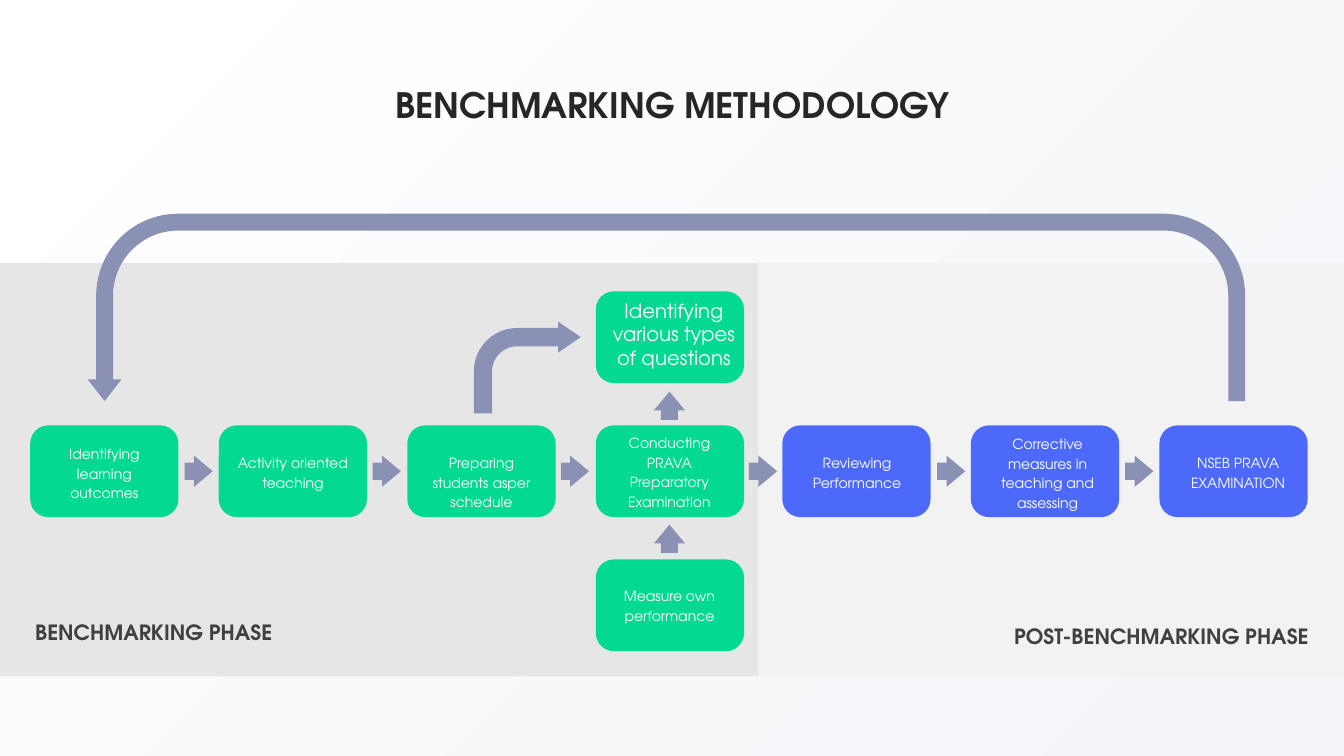
from pptx import Presentation
from pptx.dml.color import RGBColor
from pptx.enum.shapes import MSO_SHAPE
from pptx.enum.text import MSO_ANCHOR, MSO_AUTO_SIZE, PP_ALIGN
from pptx.util import Inches, Pt

RECT = MSO_SHAPE.RECTANGLE
ROUNDED = MSO_SHAPE.ROUNDED_RECTANGLE
RIGHT_ARROW = MSO_SHAPE.RIGHT_ARROW
BENT_ARROW = MSO_SHAPE.BENT_ARROW
U_TURN_ARROW = MSO_SHAPE.U_TURN_ARROW
TOP = MSO_ANCHOR.TOP
NO_AUTOFIT = MSO_AUTO_SIZE.NONE
LEFT, CENTER, RIGHT = PP_ALIGN.LEFT, PP_ALIGN.CENTER, PP_ALIGN.RIGHT

WHITE = RGBColor(0xFF, 0xFF, 0xFF)
PALE_BLUE = RGBColor(0xF2, 0xF4, 0xF8)
LIGHT_GREY = RGBColor(0xF2, 0xF2, 0xF2)
MID_GREY = RGBColor(0xE7, 0xE6, 0xE6)
GREEN = RGBColor(0x03, 0xD9, 0x90)
BLUE = RGBColor(0x4D, 0x69, 0xFA)
SLATE = RGBColor(0x8A, 0x91, 0xB5)
TITLE_INK = RGBColor(0x26, 0x26, 0x26)
LABEL_INK = RGBColor(0x40, 0x40, 0x40)
FONT = "TeX Gyre Adventor"

TITLE = "BENCHMARKING METHODOLOGY"
PHASES = [
    ("BENCHMARKING PHASE", LEFT, (0.25, 6.1, 2.58, 0.35)),
    ("POST-BENCHMARKING PHASE", RIGHT, (9.92, 6.14, 3.16, 0.35)),
]
PANELS = [(0, 7.52, MID_GREY), (7.52, 5.81, LIGHT_GREY)]

# text, column, row, fill, size, line spacing, (text left, text top, text width)
STEPS = [
    ("Identifying learning outcomes", 0, 1, GREEN, 10, 14, (0.06, 0.12, 1.35)),
    ("Activity oriented teaching", 1, 1, GREEN, 10, 14, (0.03, 0.21, 1.41)),
    ("Preparing students asper schedule", 2, 1, GREEN, 10, 14, (0.03, 0.21, 1.41)),
    ("Conducting PRAVA Preparatory Examination", 3, 1, GREEN, 10, 14, (0.19, 0.01, 1.08)),
    ("Reviewing Performance", 4, 1, BLUE, 10, 14, (0.16, 0.21, 1.16)),
    ("Corrective measures in teaching and assessing", 5, 1, BLUE, 10, 14, (0.18, 0.02, 1.16)),
    ("NSEB PRAVA EXAMINATION", 6, 1, BLUE, 10, 14, (0.2, 0.21, 1.16)),
    ("Identifying various types of questions", 3, 0, GREEN, 14, None, (0.03, 0.02, 1.49)),
    ("Measure own performance", 3, 2, GREEN, 10, 14, (0.09, 0.2, 1.28)),
]

STEP_W, STEP_H = 1.47, 0.91
COLUMN_PITCH = 1.87
COLUMN_X = [start + i * COLUMN_PITCH
            for start, count in ((0.3, 4), (7.76, 3)) for i in range(count)]
FIRST_Y, ROW_PITCH = 2.89, 1.33
SIDE_INSET = 0.05
ARROW_W, ARROW_H = 0.28, 0.31
ARROW_PITCH = (11.16 - 1.83) / 5
ARROW_ADJ = (0.547, 0.664)


def add_block(slide, kind, box, fill, adjustments=()):
    block = slide.shapes.add_shape(kind, *map(Inches, box))
    block.shadow.inherit = False
    block.fill.solid()
    block.fill.fore_color.rgb = fill
    block.line.fill.background()
    for index, value in enumerate(adjustments):
        block.adjustments[index] = value
    return block


def write(frame, text, align, color, size, bold=False, spacing=None):
    frame.text = text
    frame.vertical_anchor = TOP
    paragraph = frame.paragraphs[0]
    paragraph.alignment = align
    if spacing:
        paragraph.line_spacing = Pt(spacing)
    font = paragraph.runs[0].font
    for name, value in {"name": FONT, "size": Pt(size), "bold": bold}.items():
        setattr(font, name, value)
    font.color.rgb = color


def add_step(slide, text, column, row, fill, size, spacing, text_area):
    y = FIRST_Y + row * ROW_PITCH
    step = add_block(slide, ROUNDED, (COLUMN_X[column], y, STEP_W, STEP_H), fill, (0.196,))
    dx, dy, width = text_area
    frame = step.text_frame
    frame.word_wrap = True
    margins = {
        "margin_left": dx + SIDE_INSET,
        "margin_right": STEP_W - dx - width + SIDE_INSET,
        "margin_top": dy,
        "margin_bottom": 0,
    }
    for name, value in margins.items():
        setattr(frame, name, Inches(value))
    write(frame, text, CENTER, WHITE, size, spacing=spacing)


def main():
    prs = Presentation()
    prs.slide_width, prs.slide_height = Inches(13.33), Inches(7.5)
    slide = prs.slides.add_slide(prs.slide_layouts[5])

    backdrop = slide.background.fill
    backdrop.gradient()
    backdrop.gradient_angle = 315
    for stop, color in zip(backdrop.gradient_stops, (WHITE, PALE_BLUE)):
        stop.color.rgb = color

    title = slide.shapes.title
    title.left, title.top, title.width, title.height = map(Inches, (3.35, 0.78, 6.63, 0.52))
    write(title.text_frame, TITLE, CENTER, TITLE_INK, 25, bold=True)
    title.text_frame.auto_size = NO_AUTOFIT

    for x, width, fill in PANELS:
        add_block(slide, RECT, (x, 2.61, width, 4.1), fill)

    for step in STEPS:
        add_step(slide, *step)

    for text, align, box in PHASES:
        label = slide.shapes.add_textbox(*map(Inches, box))
        label.text_frame.word_wrap = False
        write(label.text_frame, text, align, LABEL_INK, 15, bold=True)

    feedback = add_block(slide, U_TURN_ARROW, (0.87, 2.12, 11.48, 1.86), SLATE,
                         (0.09, 0.09, 0.116, 0.438, 1))
    feedback.element.spPr.xfrm.set("flipH", "1")
    add_block(slide, BENT_ARROW, (4.7, 3.19, 1.06, 0.91), SLATE,
              (0.199, 0.17, 0.247, 0.472))

    for i in range(6):
        add_block(slide, RIGHT_ARROW, (1.83 + i * ARROW_PITCH, 4.52, ARROW_W, ARROW_H),
                  SLATE, ARROW_ADJ)
    for y in (3.87, 5.19):
        upward = add_block(slide, RIGHT_ARROW, (6.5, y, ARROW_W, ARROW_H), SLATE, ARROW_ADJ)
        upward.rotation = 270

    prs.save("out.pptx")


if __name__ == "__main__":
    main()
